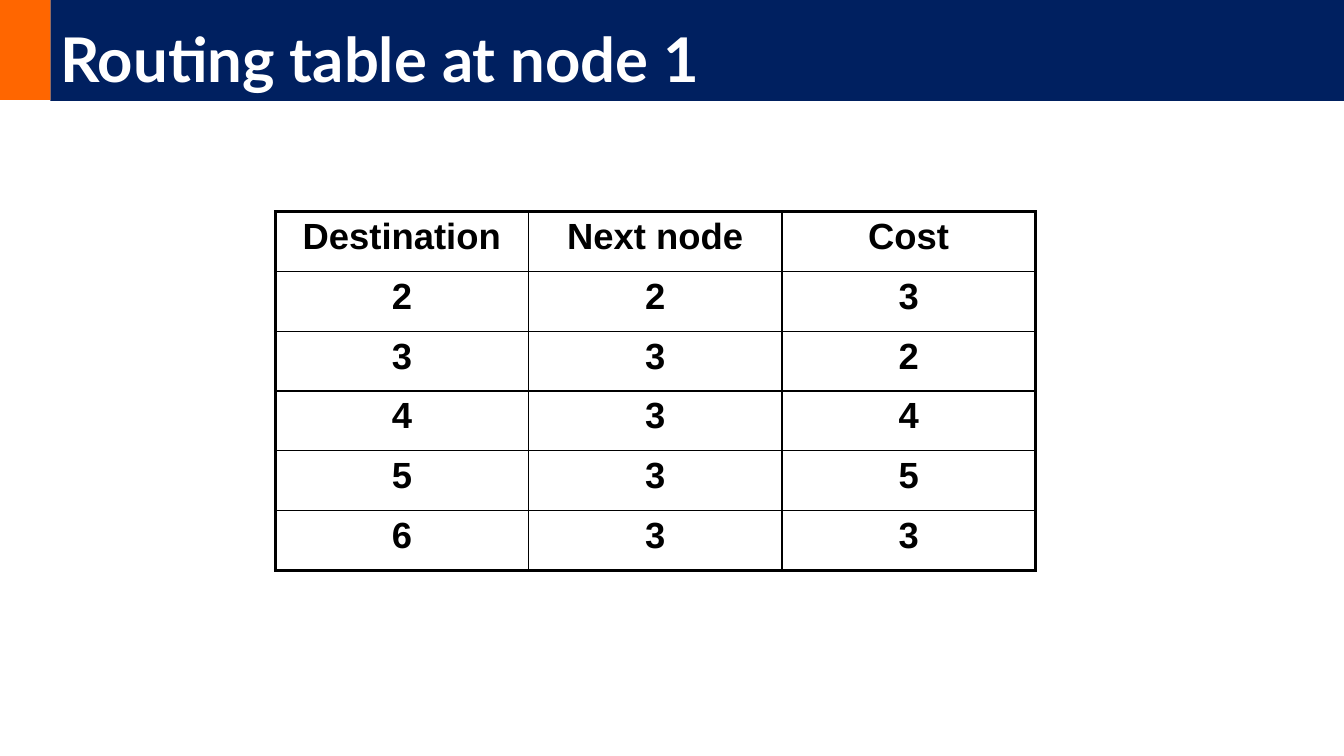
from dataclasses import dataclass
from typing import NamedTuple

from lxml.etree import SubElement
from pptx import Presentation
from pptx.dml.color import RGBColor
from pptx.enum.shapes import MSO_SHAPE
from pptx.enum.text import MSO_ANCHOR, MSO_AUTO_SIZE, PP_ALIGN
from pptx.oxml.ns import qn
from pptx.slide import Slide
from pptx.table import _Cell as Cell
from pptx.util import Pt


@dataclass(frozen=True)
class Theme:
    accent: RGBColor = RGBColor(0xFF, 0x66, 0x00)
    banner: RGBColor = RGBColor(0x00, 0x20, 0x60)
    title_text: RGBColor = RGBColor(0xFF, 0xFF, 0xFF)
    ink: RGBColor = RGBColor(0x00, 0x00, 0x00)
    title_font: str = "Lato"
    table_font: str = "Arial"
    title_size: float = 44
    table_size: float = 26
    outer_line: float = 2.25
    inner_line: float = 1


class Route(NamedTuple):
    destination: str
    next_node: str
    cost: str


THEME = Theme()
HEADER = Route("Destination", "Next node", "Cost")
ROUTES = [
    Route("2", "2", "3"),
    Route("3", "3", "2"),
    Route("4", "3", "4"),
    Route("5", "3", "5"),
    Route("6", "3", "3"),
]
SLIDE_WIDTH, SLIDE_HEIGHT = 960, 540
ACCENT_WIDTH, ACCENT_HEIGHT, BANNER_HEIGHT = 36, 71.3, 72
TABLE_LEFT, TABLE_TOP = 196.6, 151.2
COLUMN_WIDTH, ROW_HEIGHT = 181, 42.7


def add_banner(slide: Slide, text: str) -> None:
    accent = slide.shapes.add_shape(
        MSO_SHAPE.RECTANGLE, 0, 0, Pt(ACCENT_WIDTH), Pt(ACCENT_HEIGHT)
    )
    accent.shadow.inherit = False
    accent.fill.solid()
    accent.fill.fore_color.rgb = THEME.accent
    accent.line.fill.background()

    title = slide.shapes.title
    title.left, title.top = Pt(ACCENT_WIDTH), Pt(0)
    title.width, title.height = Pt(SLIDE_WIDTH - ACCENT_WIDTH), Pt(BANNER_HEIGHT)
    title.fill.solid()
    title.fill.fore_color.rgb = THEME.banner
    frame = title.text_frame
    frame.text = text
    frame.word_wrap = True
    frame.auto_size = MSO_AUTO_SIZE.NONE
    frame.vertical_anchor = MSO_ANCHOR.BOTTOM
    paragraph = frame.paragraphs[0]
    paragraph.alignment = PP_ALIGN.LEFT
    paragraph.line_spacing = 0.9
    paragraph.font.name = THEME.title_font
    paragraph.font.size = Pt(THEME.title_size)
    paragraph.font.bold = True
    paragraph.font.color.rgb = THEME.title_text


def set_borders(cell: Cell, outer_sides: dict[str, bool]) -> None:
    properties = cell._tc.get_or_add_tcPr()
    for side, is_outer in outer_sides.items():
        width = THEME.outer_line if is_outer else THEME.inner_line
        line = SubElement(properties, qn(f"a:{side}"), w=str(Pt(width)))
        fill = SubElement(line, qn("a:solidFill"))
        SubElement(fill, qn("a:srgbClr"), val=str(THEME.ink))


def format_cell(cell: Cell, text: str) -> None:
    cell.text = text
    cell.fill.background()
    paragraph = cell.text_frame.paragraphs[0]
    paragraph.alignment = PP_ALIGN.CENTER
    paragraph.font.name = THEME.table_font
    paragraph.font.size = Pt(THEME.table_size)
    paragraph.font.bold = True
    paragraph.font.color.rgb = THEME.ink


def add_routing_table(slide: Slide, rows: list[Route]) -> None:
    row_count, column_count = len(rows), len(HEADER)
    table = slide.shapes.add_table(
        row_count,
        column_count,
        Pt(TABLE_LEFT),
        Pt(TABLE_TOP),
        Pt(COLUMN_WIDTH * column_count),
        Pt(ROW_HEIGHT * row_count),
    ).table
    table.first_row = table.horz_banding = False
    for row_index, route in enumerate(rows):
        table.rows[row_index].height = Pt(ROW_HEIGHT)
        for column_index, text in enumerate(route):
            cell = table.cell(row_index, column_index)
            set_borders(
                cell,
                {
                    "lnL": column_index == 0,
                    "lnR": column_index == column_count - 1,
                    "lnT": row_index == 0,
                    "lnB": row_index == row_count - 1,
                },
            )
            format_cell(cell, text)


def main() -> None:
    presentation = Presentation()
    presentation.slide_width = Pt(SLIDE_WIDTH)
    presentation.slide_height = Pt(SLIDE_HEIGHT)
    slide = presentation.slides.add_slide(
        presentation.slide_layouts.get_by_name("Title Only")
    )
    add_banner(slide, "Routing table at node 1")
    add_routing_table(slide, [HEADER, *ROUTES])
    presentation.save("out.pptx")


if __name__ == "__main__":
    main()
